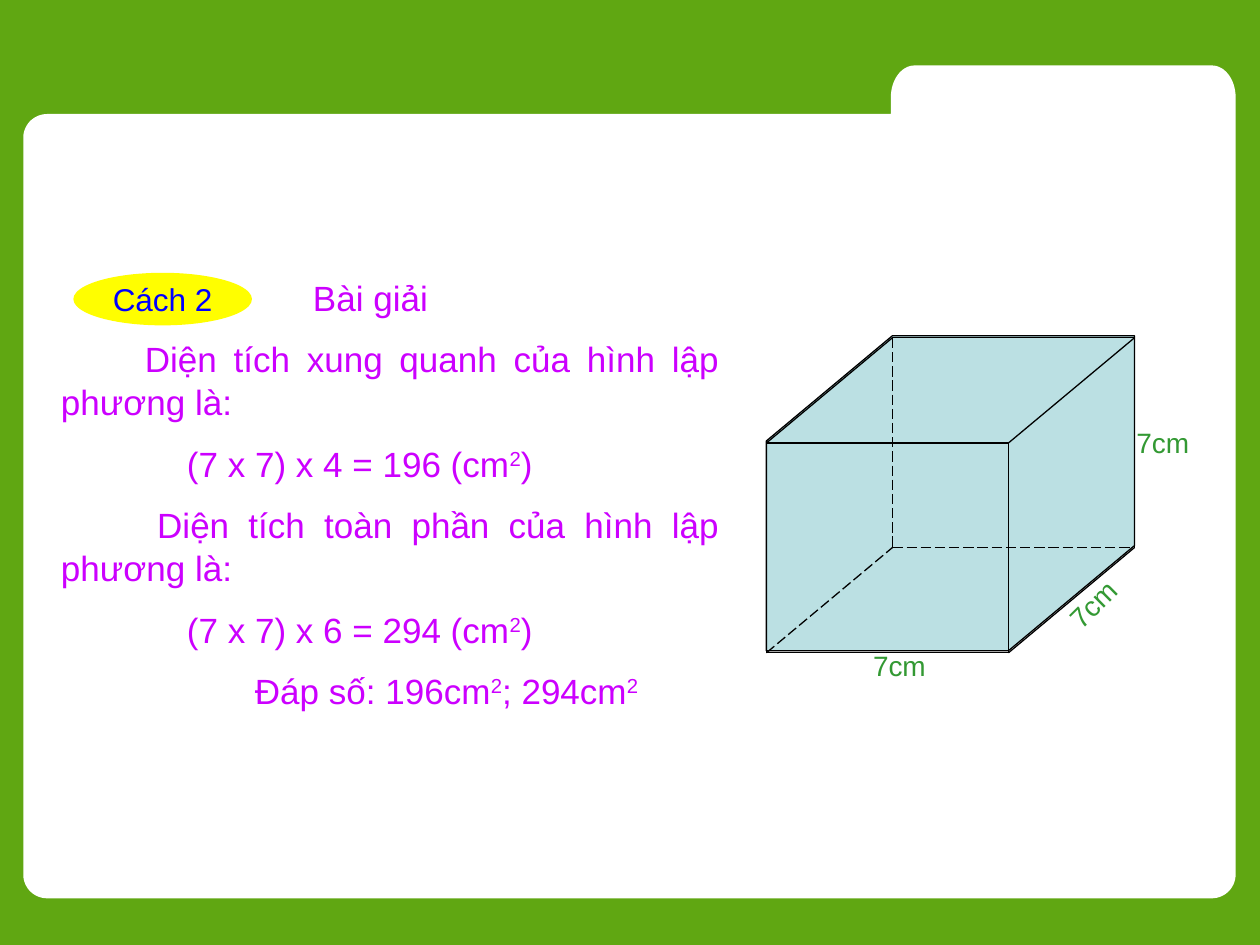
from math import cos, radians, sin

from lxml import etree
from pptx import Presentation
from pptx.dml.color import RGBColor
from pptx.enum.dml import MSO_LINE
from pptx.enum.shapes import MSO_CONNECTOR, MSO_SHAPE
from pptx.enum.text import MSO_ANCHOR, PP_ALIGN
from pptx.oxml.ns import qn
from pptx.util import Cm, Pt

STRAIGHT = MSO_CONNECTOR.STRAIGHT
LONG_DASH = MSO_LINE.LONG_DASH
CENTER, JUSTIFY = PP_ALIGN.CENTER, PP_ALIGN.JUSTIFY

COLORS = {
    "background": "60A712",
    "folder": "FFFFFF",
    "cube": "BBE0E3",
    "edge": "000000",
    "length": "339933",
    "solution": "CC00FF",
    "badge": "FFFE00",
    "badge_text": "0000FF",
}
RGB = {name: RGBColor.from_string(value) for name, value in COLORS.items()}

presentation = Presentation()
presentation.slide_width, presentation.slide_height = Cm(25.4), Cm(19.05)
slide = presentation.slides.add_slide(presentation.slide_layouts[6])
slide.background.fill.solid()
slide.background.fill.fore_color.rgb = RGB["background"]


def add_outline(points, color):
    """Draw a closed, filled polygon through points given in centimetres."""
    corners = [(Cm(x), Cm(y)) for x, y in points]
    builder = slide.shapes.build_freeform(*corners[0], scale=1.0)
    builder.add_line_segments(corners[1:], close=True)
    shape = builder.convert_to_shape()
    shape.shadow.inherit = False
    shape.fill.solid()
    shape.fill.fore_color.rgb = RGB[color]
    return shape


def add_run(paragraph, text, size, color):
    run = paragraph.add_run()
    run.text = text
    values = {"name": "Arial", "size": Pt(size)}
    for name, value in values.items():
        setattr(run.font, name, value)
    run.font.color.rgb = RGB[color]
    return run


# Folder panel: centre, radii and start angle of each rounded corner
folder_corners = [
    (18.44, 1.96, 0.48, 0.64, 180),
    (24.43, 1.96, 0.48, 0.64, 270),
    (24.43, 17.63, 0.48, 0.48, 0),
    (0.95, 17.63, 0.48, 0.48, 90),
    (0.95, 2.78, 0.48, 0.48, 180),
]
folder_points = [
    (x + rx * cos(radians(start + step)), y + ry * sin(radians(start + step)))
    for x, y, rx, ry, start in folder_corners
    for step in range(0, 91, 6)
]
folder_points.append((17.96, 2.3))
add_outline(folder_points, "folder").line.fill.background()

# Cube: front face and depth
left, top, width, height = 15.45, 8.93, 4.88, 4.23
depth_x, depth_y = 2.54, 2.12
right, bottom = left + width, top + height
back_left, back_right = left + depth_x, right + depth_x
back_top, back_bottom = top - depth_y, bottom - depth_y

silhouette = [
    (right, bottom), (left, bottom), (left, top),
    (back_left, back_top), (back_right, back_top), (back_right, back_bottom),
]
body = add_outline([(x, y - 0.04) for x, y in silhouette], "cube")
front = slide.shapes.add_shape(
    MSO_SHAPE.RECTANGLE, Cm(left), Cm(top), Cm(width), Cm(height))
front.shadow.inherit = False
front.fill.background()
for shape in (body, front):
    shape.line.color.rgb = RGB["edge"]
    shape.line.width = Pt(0.75)

edges = [
    (left, top, back_left, back_top, None),
    (right, top, back_right, back_top, None),
    (right, bottom, back_right, back_bottom, None),
    (back_left, back_top, back_right, back_top, None),
    (back_right, back_top, back_right, back_bottom, None),
    (left, bottom, back_left, back_bottom, LONG_DASH),
    (back_left, back_top, back_left, back_bottom, LONG_DASH),
    (back_left, back_bottom, back_right, back_bottom, LONG_DASH),
]
for x1, y1, x2, y2, dash in edges:
    edge = slide.shapes.add_connector(STRAIGHT, Cm(x1), Cm(y1), Cm(x2), Cm(y2))
    edge.line.color.rgb = RGB["edge"]
    edge.line.width = Pt(0.75)
    if dash:
        edge.line.dash_style = dash
    etree.SubElement(edge._element.spPr, qn("a:effectLst"))

# Edge lengths
for x, y, rotation in [(22.66, 8.46, 0), (17.35, 12.95, 0), (21.17, 11.51, 315.4)]:
    label = slide.shapes.add_textbox(Cm(x), Cm(y), Cm(2.11), Cm(0.94))
    label.rotation = rotation
    label.text_frame.word_wrap = True
    add_run(label.text_frame.paragraphs[0], "7cm", 16, "length")

# Solution: first-line indent in centimetres, then runs; "2" is a superscript
solution_lines = [
    (5.08, ["Bài giải"]),
    (1.69, ["Diện tích xung quanh của hình lập phương là:"]),
    (2.54, ["(7 x 7) x 4 = 196 (cm", "2", ")"]),
    (1.94, ["Diện tích toàn phần của hình lập phương là:"]),
    (2.54, ["(7 x 7) x 6 = 294 (cm", "2", ")"]),
    (3.91, ["Đáp số: 196cm", "2", "; 294cm", "2"]),
]
solution = slide.shapes.add_textbox(Cm(0.98), Cm(5.41), Cm(13.77), Cm(9.25))
frame = solution.text_frame
frame.word_wrap = True
for index, (indent, texts) in enumerate(solution_lines):
    paragraph = frame.add_paragraph() if index else frame.paragraphs[0]
    values = {"alignment": JUSTIFY, "line_spacing": 1.04,
              "space_before": Pt(10 if index else 0)}
    for name, value in values.items():
        setattr(paragraph, name, value)
    paragraph._p.get_or_add_pPr().set("indent", str(Cm(indent)))
    for text in texts:
        run = add_run(paragraph, text, 20, "solution")
        if text == "2":
            run.font._element.set("baseline", "30000")

# Method badge
badge = slide.shapes.add_shape(
    MSO_SHAPE.OVAL, Cm(1.48), Cm(5.5), Cm(3.6), Cm(1.06))
badge.shadow.inherit = False
badge.fill.solid()
badge.fill.fore_color.rgb = RGB["badge"]
badge.line.fill.background()
badge.text_frame.word_wrap = False
badge.text_frame.vertical_anchor = MSO_ANCHOR.MIDDLE
badge.text_frame.paragraphs[0].alignment = CENTER
add_run(badge.text_frame.paragraphs[0], "Cách 2", 18, "badge_text")

presentation.save("out.pptx")
